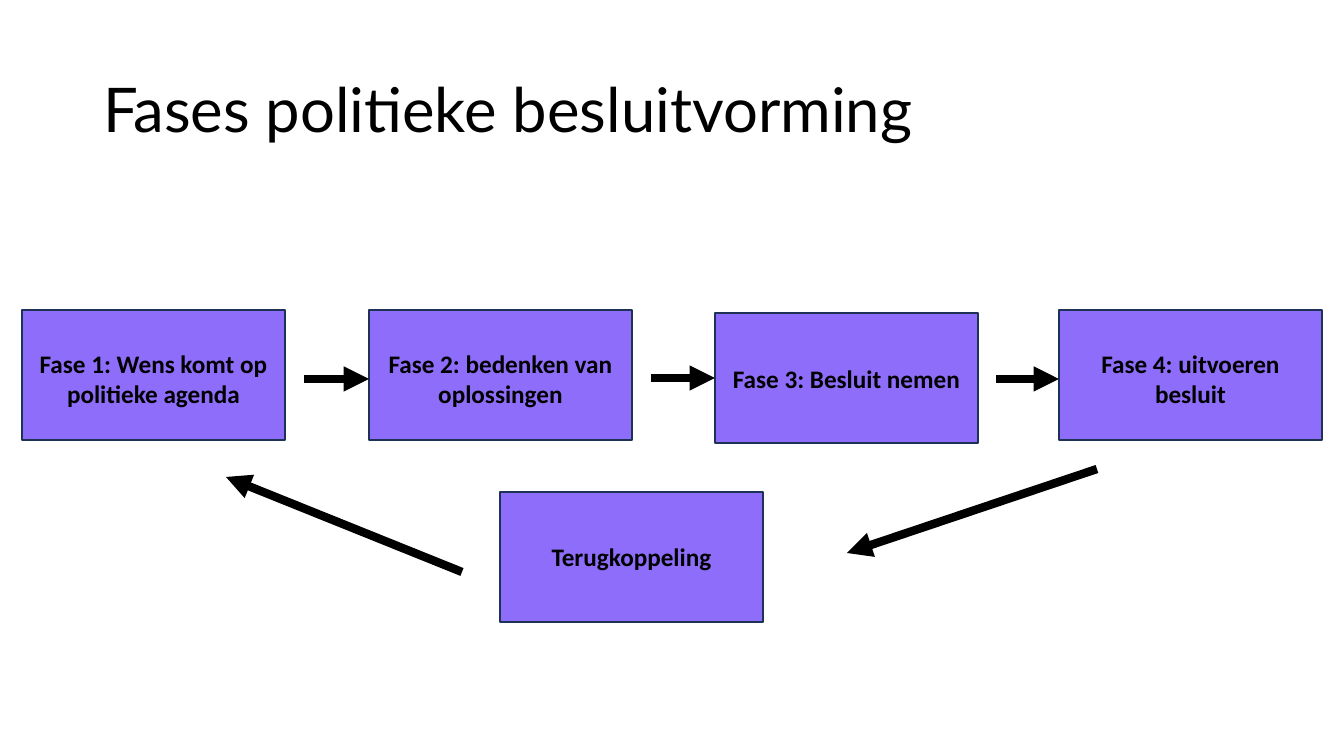
"""Builds the slide on the phases of political decision-making."""
from lxml import etree
from pptx import Presentation
from pptx.dml.color import RGBColor
from pptx.enum.shapes import MSO_CONNECTOR, MSO_SHAPE
from pptx.enum.text import MSO_ANCHOR, MSO_AUTO_SIZE, PP_ALIGN
from pptx.oxml.ns import qn
from pptx.util import Pt

PX = 914400 / 100.8
RECT = MSO_SHAPE.RECTANGLE
LINE = MSO_CONNECTOR.STRAIGHT
LEFT, CENTER = PP_ALIGN.LEFT, PP_ALIGN.CENTER
MIDDLE = MSO_ANCHOR.MIDDLE
GROW = MSO_AUTO_SIZE.SHAPE_TO_FIT_TEXT
NONE = MSO_AUTO_SIZE.NONE
BLACK = RGBColor(0, 0, 0)
PURPLE = RGBColor(0x8E, 0x6D, 0xFA)
NAVY = RGBColor(0x1E, 0x32, 0x56)
WIDE, HIGH = 263, 130


def px(*nums):
    """Turn pixels into EMU."""
    return [round(n * PX) for n in nums]


def style(para, name, size, bold, align):
    """Format a paragraph and its runs."""
    para.alignment = align
    for run in para.runs:
        font = run.font
        font.name, font.size, font.bold = name, Pt(size), bold
        font.color.rgb = BLACK


deck = Presentation()
deck.slide_width, deck.slide_height = px(1344, 756)
slide = deck.slides.add_slide(deck.slide_layouts[5])
shapes = slide.shapes

title = shapes.title
title.left, title.top, title.width, title.height = px(93, 40, 1159, 146)
frame = title.text_frame
frame.text = "Fases politieke besluitvorming"
frame.word_wrap = True
frame.auto_size = NONE
frame.vertical_anchor = MIDDLE
frame.paragraphs[0].line_spacing = 0.9
style(frame.paragraphs[0], "Lato", 44, False, LEFT)

steps = [
    ("Fase 1: Wens komt op politieke agenda", 22, 310, 343, 72),
    ("Fase 2: bedenken van oplossingen", 369, 310, 343, 72),
    ("Fase 3: Besluit nemen", 715, 313, 358, 40),
    ("Fase 4: uitvoeren besluit", 1059, 310, 343, 72),
    ("Terugkoppeling", 500, 492, 536, 40),
]
for words, left, top, text_top, text_high in steps:
    box = shapes.add_shape(RECT, *px(left, top, WIDE, HIGH))
    box.shadow.inherit = False
    box.fill.solid()
    box.fill.fore_color.rgb = PURPLE
    box.line.color.rgb = NAVY
    box.line.width = Pt(1)

    label = shapes.add_textbox(*px(left, text_top, WIDE, text_high))
    frame = label.text_frame
    frame.word_wrap = True
    frame.auto_size = GROW
    frame.text = words
    style(frame.paragraphs[0], "Calibri", 18, True, CENTER)

arrows = [
    (304, 379, 369, 379),
    (651, 378, 715, 378),
    (996, 379, 1059, 379),
    (1097, 469, 847, 553),
    (462, 572, 226, 477),
]
for ends in arrows:
    arrow = shapes.add_connector(LINE, *px(*ends))
    arrow.line.color.rgb = BLACK
    arrow.line.width = Pt(6)
    tail = etree.SubElement(arrow.line._get_or_add_ln(), qn("a:tailEnd"))
    tail.set("type", "triangle")
    etree.SubElement(arrow._element.spPr, qn("a:effectLst"))

deck.save("out.pptx")
